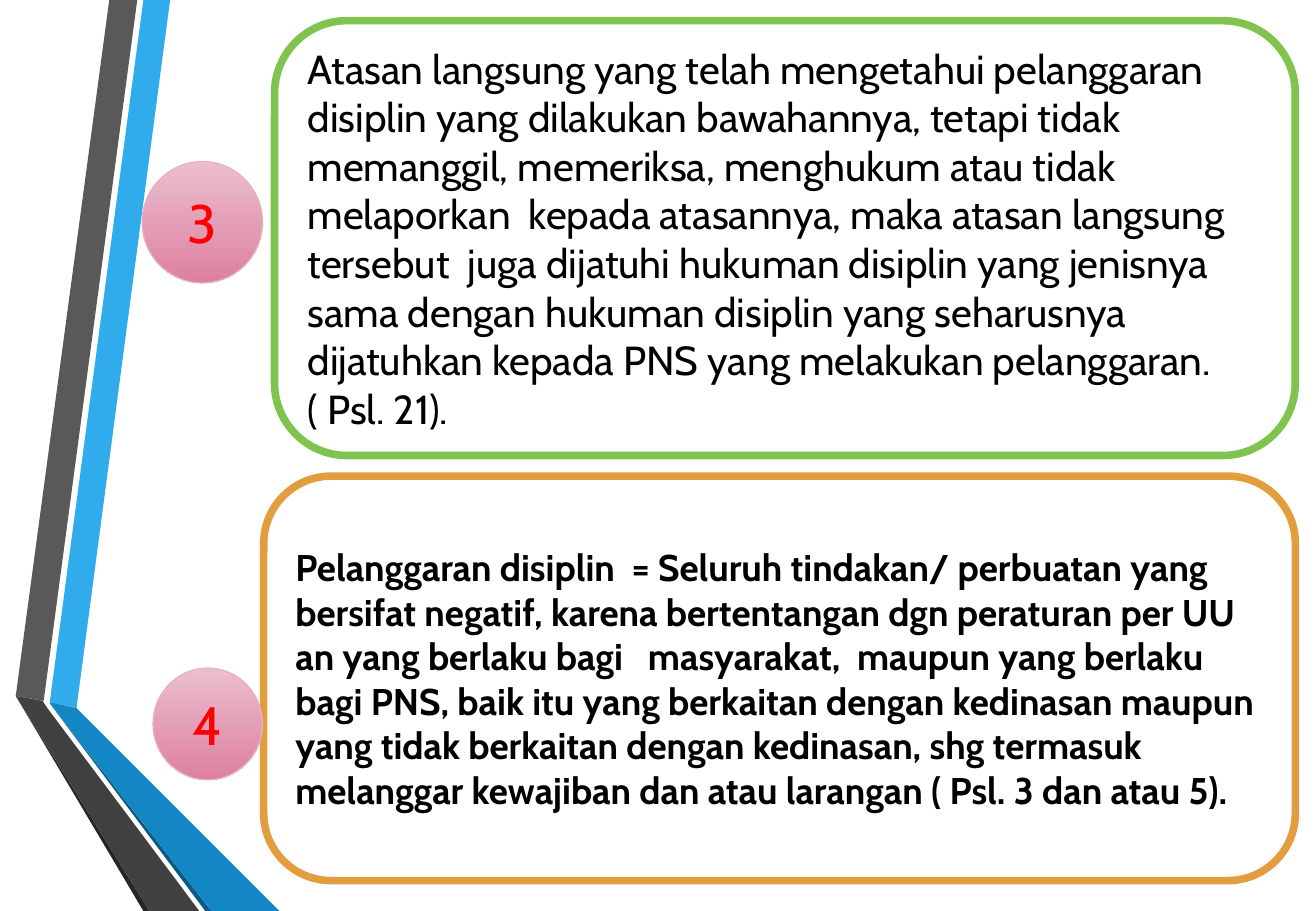
import pptx
import pptx.util
import pptx.dml.color
import pptx.enum.shapes
import pptx.enum.text

Inches = pptx.util.Inches
SHAPE = pptx.enum.shapes.MSO_SHAPE
ALIGN = pptx.enum.text.PP_ALIGN

HUES = {
    "white": "FFFFFF", "black": "000000", "red": "FF0000",
    "sky": "30ACEC", "blue": "1287C3", "navy": "0C5A82",
    "gray": "595959", "dark": "404040", "coal": "262626",
    "green": "80C34F", "gold": "E29D3E",
    "pale": "EBBECD", "pink": "DD80A2", "rim": "E8B1C3",
}

BANDS = [
    ("sky", [(0.28, 5.78), (0.5, 5.83), (1.27, 0), (1.05, 0)]),
    ("gray", [(1, 0), (0.77, 0), (0, 5.73), (0.23, 5.77)]),
    ("coal", [(0, 5.73), (1.05, 7.5), (1.1, 7.5)]),
    ("navy", [(0.28, 5.79), (1.56, 7.5), (1.61, 7.5)]),
    ("blue", [(0.28, 5.78), (0.28, 5.79), (1.61, 7.5), (2.17, 7.5), (0.5, 5.83)]),
    ("dark", [(0, 5.73), (1.1, 7.5), (1.51, 7.5), (0.26, 5.83), (0.22, 5.77)]),
]

RULES = [
    {
        "card": (2.26, 0.17, 8.4, 3.58), "edge": "green",
        "text": "Atasan langsung yang telah mengetahui pelanggaran disiplin yang "
                "dilakukan bawahannya, tetapi tidak memanggil, memeriksa, menghukum "
                "atau tidak melaporkan  kepada atasannya, maka atasan langsung "
                "tersebut  juga dijatuhi hukuman disiplin yang jenisnya sama dengan "
                "hukuman disiplin yang seharusnya dijatuhkan kepada PNS yang "
                "melakukan pelanggaran.( Psl. 21).",
        "size": 24, "bold": False,
        "disc": (-1.09, 1.16, 0.99, 1), "mark": "3",
    },
    {
        "card": (2.17, 3.92, 8.49, 3.33), "edge": "gold",
        "text": "Pelanggaran disiplin  = Seluruh tindakan/ perbuatan yang bersifat "
                "negatif, karena bertentangan dgn peraturan per UU an yang berlaku "
                "bagi   masyarakat,  maupun yang berlaku bagi PNS, baik itu yang "
                "berkaitan dengan kedinasan maupun yang tidak berkaitan dengan "
                "kedinasan, shg termasuk melanggar kewajiban dan atau larangan "
                "( Psl. 3 dan atau 5).",
        "size": 22, "bold": True,
        "disc": (-0.91, 1.58, 0.9, 0.92), "mark": "4",
    },
]


def hue(name):
    return pptx.dml.color.RGBColor.from_string(HUES[name])


def apply(item, form):
    for key, value in form.items():
        setattr(item, key, value)


def add_bands(slide, left, top):
    for tint, points in BANDS:
        spots = [(Inches(left + x), Inches(top + y)) for x, y in points]
        pen = slide.shapes.build_freeform(*spots[0], scale=1.0)
        pen.add_line_segments(spots[1:], close=True)
        band = pen.convert_to_shape()
        band.shadow.inherit = False
        band.fill.solid()
        band.fill.fore_color.rgb = hue(tint)
        band.line.fill.background()


def add_shape(slide, kind, box, edge, width, text, tint, align, form):
    shape = slide.shapes.add_shape(kind, *map(Inches, box))
    shape.shadow.inherit = False
    shape.line.color.rgb = hue(edge)
    shape.line.width = pptx.util.Pt(width)
    frame = shape.text_frame
    apply(frame, {"word_wrap": True, "vertical_anchor": pptx.enum.text.MSO_ANCHOR.MIDDLE})
    para = frame.paragraphs[0]
    para.alignment = align
    run = para.add_run()
    run.text = text
    apply(run.font, {"name": "Cabin", **form})
    run.font.color.rgb = hue(tint)
    return shape


def add_rule(slide, box, rule):
    left, top = box[:2]
    form = {"size": pptx.util.Pt(rule["size"]), "bold": rule["bold"]}
    card = add_shape(slide, SHAPE.ROUNDED_RECTANGLE, box, rule["edge"], 4.5,
                     rule["text"], "black", ALIGN.LEFT, form)
    card.fill.solid()
    card.fill.fore_color.rgb = hue("white")

    x, y, wide, high = rule["disc"]
    disc = add_shape(slide, SHAPE.OVAL, (left + x, top + y, wide, high), "rim", 0.75,
                     rule["mark"], "red", ALIGN.CENTER, {"size": pptx.util.Pt(32)})
    disc.fill.gradient()
    disc.fill.gradient_angle = 270
    for stop, tint in zip(disc.fill.gradient_stops, ("pale", "pink")):
        stop.color.rgb = hue(tint)


def main():
    deck = pptx.Presentation()
    apply(deck, {"slide_width": Inches(10.83), "slide_height": Inches(7.5)})
    slide = deck.slides.add_slide(deck.slide_layouts[6])
    add_bands(slide, 0.13, 0)
    for rule in RULES:
        add_rule(slide, rule["card"], rule)
    deck.save("out.pptx")


if __name__ == "__main__":
    main()
